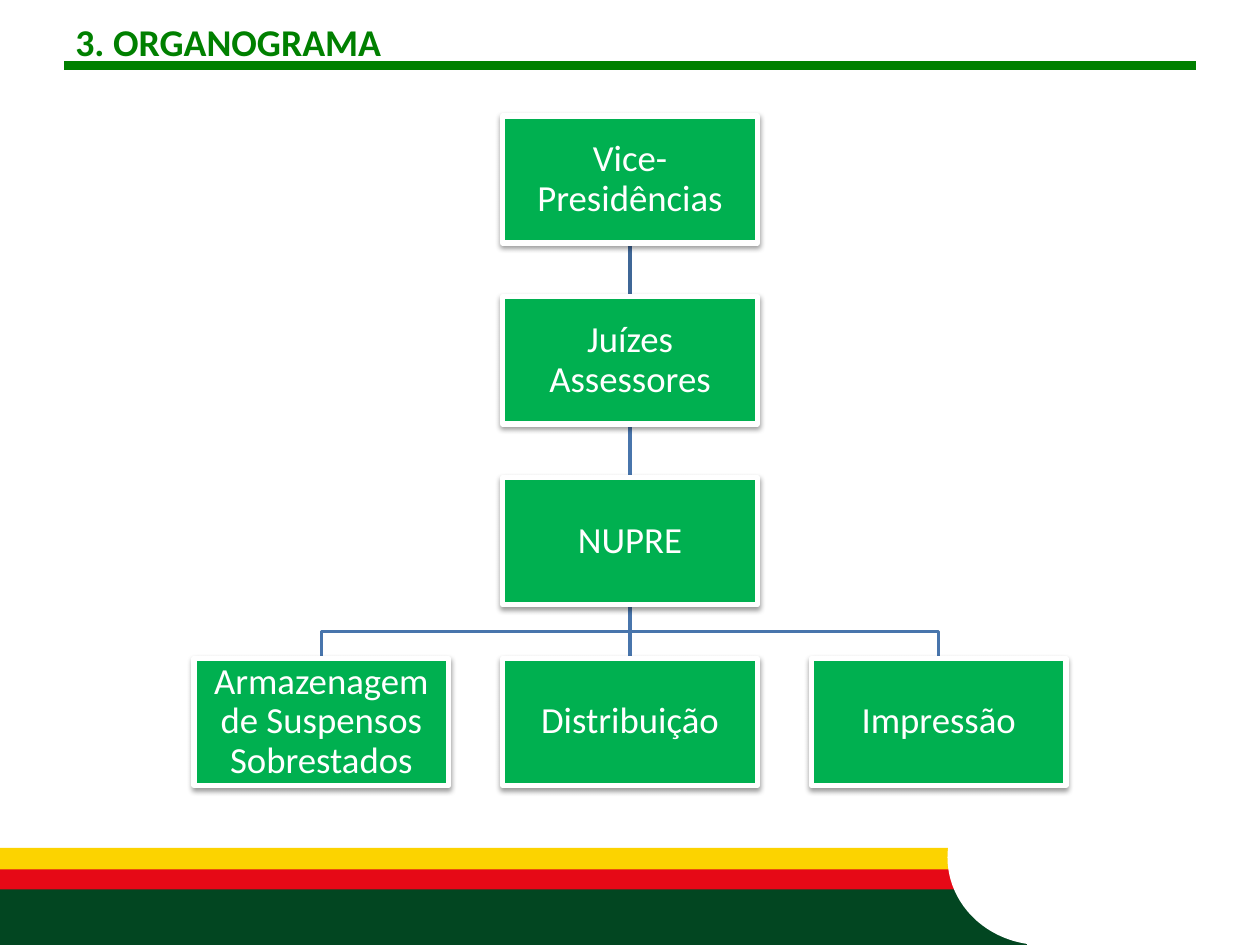
from dataclasses import dataclass

from lxml import etree
from pptx import Presentation
from pptx.dml.color import RGBColor
from pptx.enum.shapes import MSO_CONNECTOR, MSO_SHAPE
from pptx.enum.text import MSO_ANCHOR, PP_ALIGN
from pptx.oxml.ns import qn
from pptx.util import Inches, Pt

RECTANGLE, OVAL = MSO_SHAPE.RECTANGLE, MSO_SHAPE.OVAL
STRAIGHT = MSO_CONNECTOR.STRAIGHT
MIDDLE = MSO_ANCHOR.MIDDLE
CENTER = PP_ALIGN.CENTER


@dataclass(frozen=True)
class Theme:
    font: str = "Calibri"
    title_size: float = 21.6
    box_size: float = 21
    title: str = "008000"
    box: str = "00B050"
    white: str = "FFFFFF"
    link: str = "4875AC"
    top_link: str = "3F6797"
    yellow: str = "FCD300"
    red: str = "E60916"
    dark_green: str = "024621"


@dataclass(frozen=True)
class Block:
    left: float
    top: float
    width: float
    height: float
    color: str
    kind: MSO_SHAPE = RECTANGLE


@dataclass(frozen=True)
class Node:
    text: str
    column: int
    row: int

    @property
    def center(self) -> float:
        return 5 + self.column * COLUMN_STEP

    @property
    def top(self) -> float:
        return FIRST_TOP + self.row * ROW_STEP

    @property
    def bottom(self) -> float:
        return self.top + BOX_H


THEME = Theme()
BOX_W, BOX_H = 2.02, 1.01
COLUMN_STEP, ROW_STEP, FIRST_TOP = 2.45, 1.435, 0.92

FOOTER = [
    Block(0, 6.73, 7.68, 0.6, THEME.yellow),
    Block(0, 6.9, 7.91, 0.6, THEME.red),
    Block(0, 7.06, 8.15, 0.44, THEME.dark_green),
    Block(7.52, 6.11, 1.5, 1.39, THEME.white, OVAL),
]
CHAIN = [
    Node("Vice-Presidências", 0, 0),
    Node("Juízes Assessores", 0, 1),
    Node("NUPRE", 0, 2),
]
SECTORS = [
    Node("Armazenagem de Suspensos Sobrestados", -1, 3),
    Node("Distribuição", 0, 3),
    Node("Impressão", 1, 3),
]


def rgb(color: str) -> RGBColor:
    return RGBColor.from_string(color)


def style_text(p, size: float, color: str, bold: bool = False) -> None:
    font = p.runs[0].font
    font.name, font.size, font.bold = THEME.font, Pt(size), bold
    font.color.rgb = rgb(color)


def add_block(slide, block: Block):
    sp = slide.shapes.add_shape(
        block.kind, Inches(block.left), Inches(block.top),
        Inches(block.width), Inches(block.height))
    sp.shadow.inherit = False
    sp.fill.solid()
    sp.fill.fore_color.rgb = rgb(block.color)
    sp.line.fill.background()
    return sp


def add_line(slide, x1: float, y1: float, x2: float, y2: float,
             color: str, width: float) -> None:
    line = slide.shapes.add_connector(
        STRAIGHT, Inches(x1), Inches(y1), Inches(x2), Inches(y2))
    line.line.color.rgb = rgb(color)
    line.line.width = Pt(width)
    etree.SubElement(line._element.spPr, qn("a:effectLst"))


def add_elbow(slide, parent: Node, child: Node) -> None:
    middle = (parent.bottom + child.top) / 2
    points = [(parent.center, middle), (child.center, middle),
              (child.center, child.top)]
    builder = slide.shapes.build_freeform(
        Inches(parent.center), Inches(parent.bottom))
    builder.add_line_segments(
        [(Inches(x), Inches(y)) for x, y in points], close=False)
    sp = builder.convert_to_shape()
    sp.shadow.inherit = False
    sp.fill.background()
    sp.line.color.rgb = rgb(THEME.link)
    sp.line.width = Pt(2)


def add_link(slide, parent: Node, child: Node) -> None:
    if parent.column != child.column:
        add_elbow(slide, parent, child)
        return
    color = THEME.link if parent.row else THEME.top_link
    add_line(slide, parent.center, parent.bottom,
             child.center, child.top, color, 2)


def add_soft_shadow(sp) -> None:
    effects = sp._element.spPr.find(qn("a:effectLst"))
    shadow = etree.SubElement(
        effects, qn("a:outerShdw"), blurRad=str(Pt(3.1)), dist=str(Pt(1.6)),
        dir="5400000", rotWithShape="0")
    black = etree.SubElement(shadow, qn("a:srgbClr"), val="000000")
    etree.SubElement(black, qn("a:alpha"), val="38000")


def add_node(slide, node: Node) -> None:
    sp = add_block(slide, Block(node.center - BOX_W / 2, node.top,
                                BOX_W, BOX_H, THEME.box))
    sp.line.color.rgb = rgb(THEME.white)
    sp.line.width = Pt(3)
    add_soft_shadow(sp)
    tf = sp.text_frame
    tf.word_wrap = True
    tf.vertical_anchor = MIDDLE
    tf.margin_left = tf.margin_right = Inches(0.01)
    tf.margin_top = tf.margin_bottom = Inches(0.01)
    p = tf.paragraphs[0]
    p.text = node.text
    p.alignment = CENTER
    p.line_spacing = 0.9
    style_text(p, THEME.box_size, THEME.white)


def add_title(slide, text: str) -> None:
    add_line(slide, 0.51, 0.52, 9.49, 0.52, THEME.title, 5)
    tf = slide.shapes.add_textbox(
        Inches(0.5), Inches(0.14), Inches(9), Inches(0.38)).text_frame
    tf.word_wrap = True
    tf.vertical_anchor = MIDDLE
    tf.text = text
    style_text(tf.paragraphs[0], THEME.title_size, THEME.title, bold=True)


def main() -> None:
    prs = Presentation()
    prs.slide_width, prs.slide_height = Inches(10), Inches(7.5)
    slide = prs.slides.add_slide(prs.slide_layouts[6])
    for block in FOOTER:
        add_block(slide, block)
    add_title(slide, "3. ORGANOGRAMA")
    for sector in reversed(SECTORS):
        add_link(slide, CHAIN[-1], sector)
    for parent, child in zip(CHAIN, CHAIN[1:]):
        add_link(slide, parent, child)
    for node in CHAIN + SECTORS:
        add_node(slide, node)
    prs.save("out.pptx")


if __name__ == "__main__":
    main()
